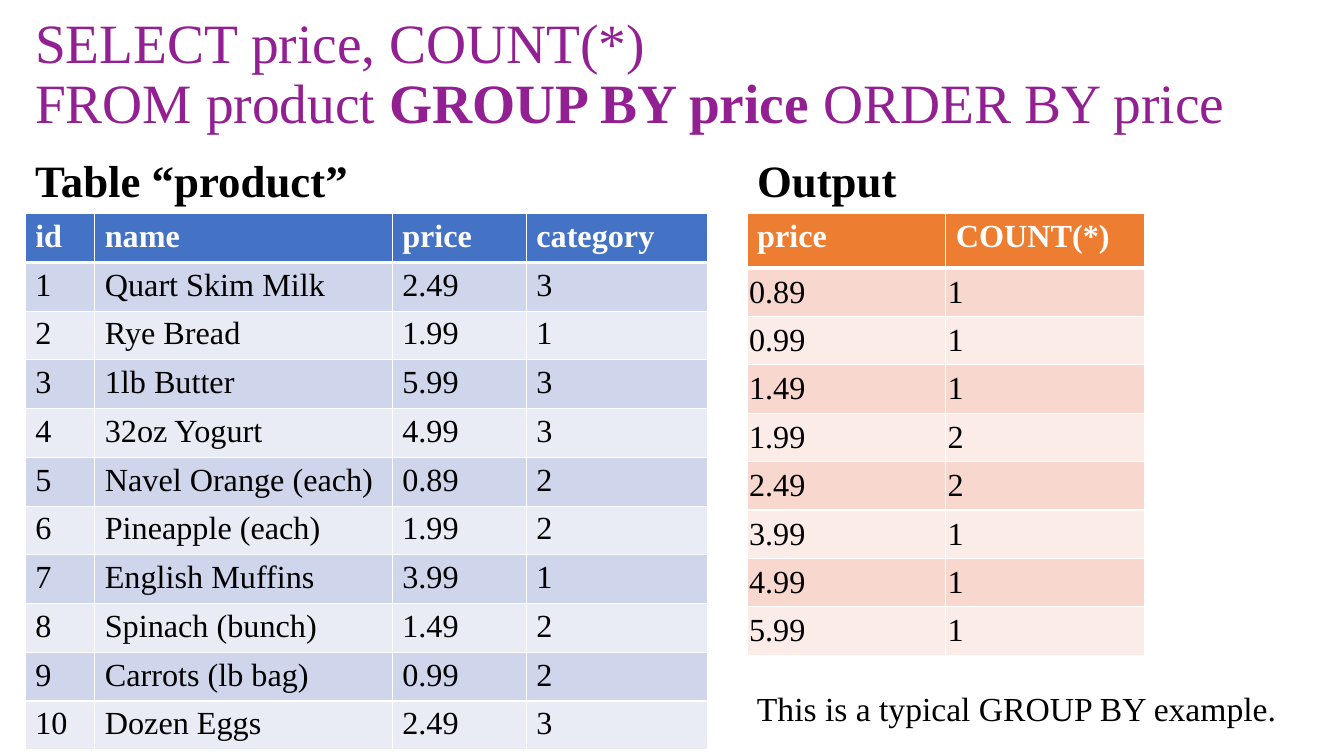
from dataclasses import dataclass

from lxml.etree import SubElement
from pptx import Presentation
from pptx.dml.color import RGBColor
from pptx.enum.text import MSO_ANCHOR as Anchor, MSO_AUTO_SIZE as AutoSize
from pptx.oxml.ns import qn
from pptx.slide import Slide
from pptx.table import _Cell as Cell
from pptx.text.text import _Paragraph as Paragraph
from pptx.util import Emu, Pt

PX = 9144
FONT = "Times New Roman"
PURPLE = RGBColor(0x93, 0x20, 0x92)
BLACK = RGBColor(0x00, 0x00, 0x00)
WHITE = RGBColor(0xFF, 0xFF, 0xFF)
BLUE = RGBColor(0x44, 0x72, 0xC4)
BLUE_BANDS = (RGBColor(0xCF, 0xD5, 0xEA), RGBColor(0xE9, 0xEB, 0xF5))
ORANGE = RGBColor(0xED, 0x7D, 0x31)
ORANGE_BANDS = (RGBColor(0xF8, 0xD7, 0xCE), RGBColor(0xFC, 0xEC, 0xE8))
LEFT, RIGHT = 25, 741
HEADING_TOP, TABLE_TOP = 152, 212
CELL_SIZE = 23


@dataclass(frozen=True)
class Run:
    text: str
    bold: bool = False


@dataclass(frozen=True)
class TextBlock:
    box: tuple[int, int, int, int]
    lines: list[list[Run]]
    size: float
    color: RGBColor = BLACK
    anchor: Anchor = Anchor.TOP
    line_spacing: float = 1.0
    space_before: int = 0
    auto_size: AutoSize = AutoSize.NONE


@dataclass(frozen=True)
class Grid:
    left: int
    columns: list[int]
    header_height: int
    row_height: int
    header_color: RGBColor
    bands: tuple[RGBColor, RGBColor]
    rows: list[tuple[str, ...]]
    body_margin: int | None = None
    body_anchor: Anchor = Anchor.TOP


TEXT_BLOCKS = [
    TextBlock((LEFT, 15, 1285, 119),
              [[Run("SELECT price, COUNT(*)")],
               [Run("FROM product "), Run("GROUP BY price ", True), Run("ORDER BY price")]],
              39.6, PURPLE, Anchor.MIDDLE, 0.9),
    TextBlock((LEFT, HEADING_TOP, 630, 58), [[Run("Table “product”", True)]],
              32, BLACK, Anchor.BOTTOM, 0.9, 10),
    TextBlock((RIGHT, HEADING_TOP, 569, 58), [[Run("Output", True)]],
              32, BLACK, Anchor.BOTTOM, 0.9, 10),
    TextBlock((RIGHT, 678, 564, 50), [[Run("This is a typical GROUP BY example.")]],
              24, auto_size=AutoSize.SHAPE_TO_FIT_TEXT),
]

GRIDS = [
    Grid(LEFT, [69, 295, 133, 180], 45, 45, BLUE, BLUE_BANDS, [
        ("id", "name", "price", "category"),
        ("1", "Quart Skim Milk", "2.49", "3"),
        ("2", "Rye Bread", "1.99", "1"),
        ("3", "1lb Butter", "5.99", "3"),
        ("4", "32oz Yogurt", "4.99", "3"),
        ("5", "Navel Orange (each)", "0.89", "2"),
        ("6", "Pineapple (each)", "1.99", "2"),
        ("7", "English Muffins", "3.99", "1"),
        ("8", "Spinach (bunch)", "1.49", "2"),
        ("9", "Carrots (lb bag)", "0.99", "2"),
        ("10", "Dozen Eggs", "2.49", "3"),
    ]),
    Grid(RIGHT, [197, 197], 54, 48, ORANGE, ORANGE_BANDS, [
        ("price", "COUNT(*)"),
        ("0.89", "1"),
        ("0.99", "1"),
        ("1.49", "1"),
        ("1.99", "2"),
        ("2.49", "2"),
        ("3.99", "1"),
        ("4.99", "1"),
        ("5.99", "1"),
    ], 2, Anchor.MIDDLE),
]


def px(length: int) -> Emu:
    """Convert a length in px to EMU."""
    return Emu(length * PX)


def add_run(paragraph: Paragraph, run: Run, size: float, color: RGBColor) -> None:
    """Add one formatted run to a paragraph."""
    text_run = paragraph.add_run()
    text_run.text = run.text
    text_run.font.name = FONT
    text_run.font.size = Pt(size)
    text_run.font.bold = run.bold
    text_run.font.color.rgb = color


def draw_text(slide: Slide, block: TextBlock) -> None:
    """Draw a text block as a wrapping text box."""
    frame = slide.shapes.add_textbox(*map(px, block.box)).text_frame
    frame.word_wrap = True
    frame.auto_size = block.auto_size
    frame.vertical_anchor = block.anchor
    paragraph = frame.paragraphs[0]
    paragraph.line_spacing = block.line_spacing
    paragraph.space_before = Pt(block.space_before)
    for index, line in enumerate(block.lines):
        if index:
            paragraph.add_line_break()
        for run in line:
            add_run(paragraph, run, block.size, block.color)


def add_borders(cell: Cell, top: int, bottom: int) -> None:
    """Give a cell white borders, one point wide at its sides."""
    properties = cell._tc.get_or_add_tcPr()
    for side, width in (("L", 1), ("R", 1), ("T", top), ("B", bottom)):
        line = SubElement(properties, qn(f"a:ln{side}"), w=str(Pt(width)))
        fill = SubElement(line, qn("a:solidFill"))
        SubElement(fill, qn("a:srgbClr"), val=str(WHITE))


def draw_grid(slide: Slide, grid: Grid) -> None:
    """Draw a table with a coloured header and banded rows."""
    heights = [grid.header_height] + [grid.row_height] * (len(grid.rows) - 1)
    table = slide.shapes.add_table(
        len(heights), len(grid.columns), px(grid.left), px(TABLE_TOP),
        px(sum(grid.columns)), px(sum(heights))).table
    for column, width in zip(table.columns, grid.columns):
        column.width = px(width)
    for row_index, (values, height) in enumerate(zip(grid.rows, heights)):
        is_header = row_index == 0
        table.rows[row_index].height = px(height)
        for column_index, value in enumerate(values):
            cell = table.cell(row_index, column_index)
            add_borders(cell, 3 if row_index == 1 else 1, 3 if is_header else 1)
            cell.fill.solid()
            cell.fill.fore_color.rgb = (
                grid.header_color if is_header else grid.bands[(row_index - 1) % 2])
            if not is_header:
                cell.vertical_anchor = grid.body_anchor
                if grid.body_margin is not None:
                    margin = px(grid.body_margin)
                    cell.margin_left = cell.margin_right = margin
                    cell.margin_top = cell.margin_bottom = margin
            add_run(cell.text_frame.paragraphs[0], Run(value, is_header),
                    CELL_SIZE, WHITE if is_header else BLACK)


def main() -> None:
    """Build the slide and save the presentation."""
    presentation = Presentation()
    presentation.slide_width, presentation.slide_height = px(1333), px(750)
    slide = presentation.slides.add_slide(presentation.slide_layouts[6])
    for block in TEXT_BLOCKS:
        draw_text(slide, block)
    for grid in GRIDS:
        draw_grid(slide, grid)
    presentation.save("out.pptx")


if __name__ == "__main__":
    main()
